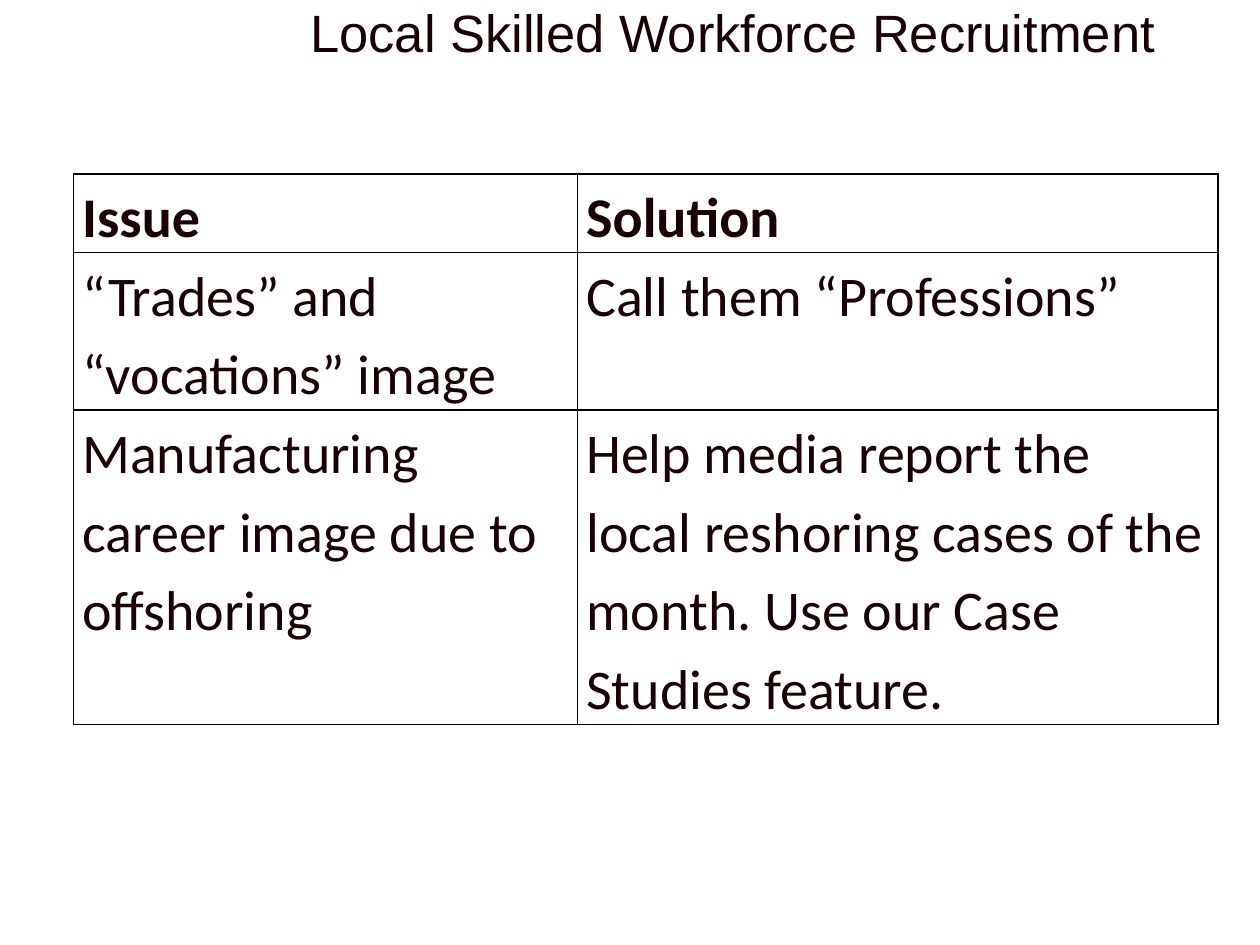
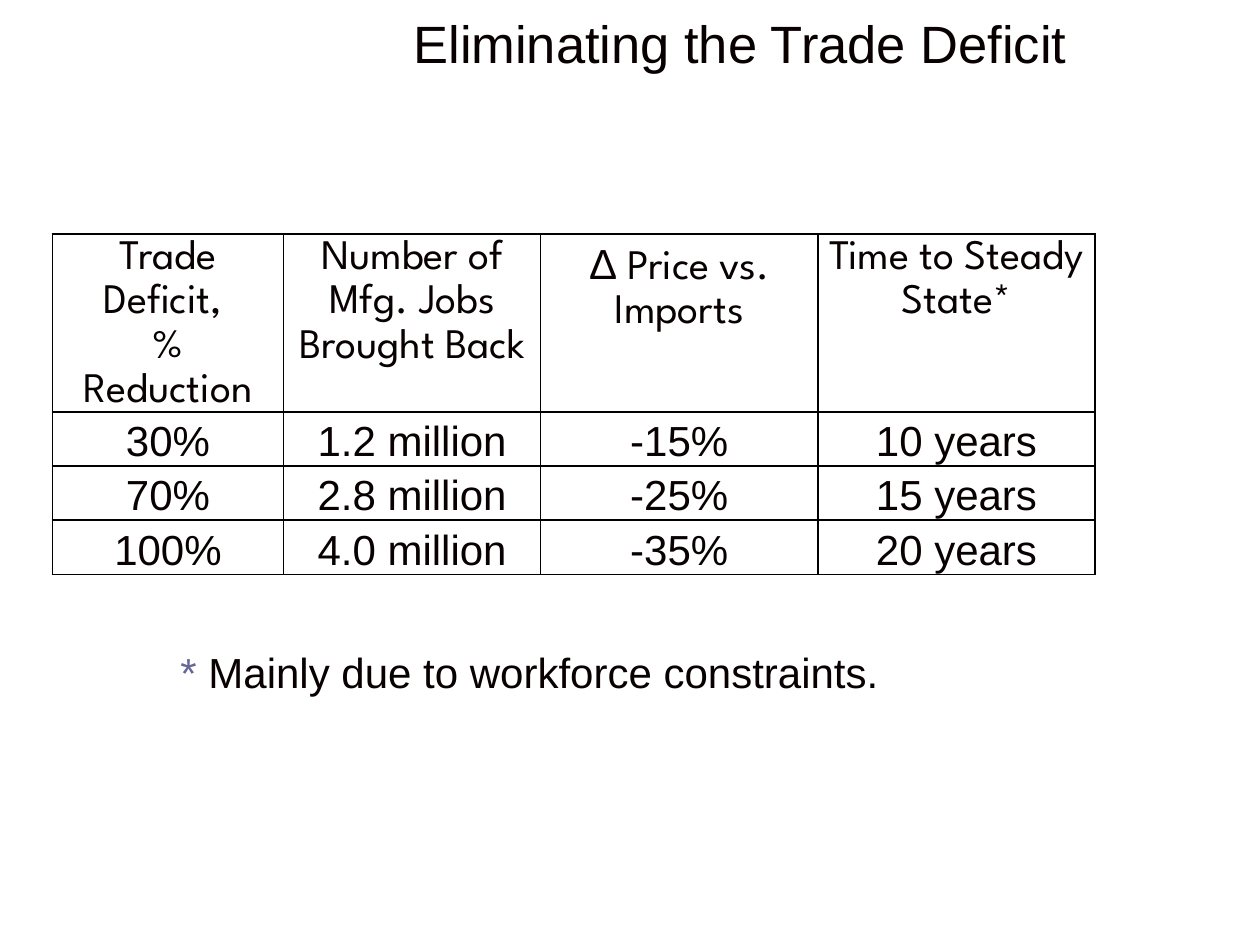
"""Build two slides on workforce recruitment and the trade deficit."""
from dataclasses import dataclass

from lxml import etree
from pptx import Presentation
from pptx.dml.color import RGBColor
from pptx.enum.text import MSO_ANCHOR, MSO_AUTO_SIZE, PP_ALIGN
from pptx.oxml.ns import qn
from pptx.util import Pt

LEFT, CENTER = PP_ALIGN.LEFT, PP_ALIGN.CENTER
TOP, MIDDLE = MSO_ANCHOR.TOP, MSO_ANCHOR.MIDDLE
NO_AUTOFIT = MSO_AUTO_SIZE.NONE
TITLE_ONLY = 5


@dataclass(frozen=True)
class Theme:
    """Hold the colours, fonts and type sizes."""
    maroon: str = "190104"
    ink: str = "080001"
    accent: str = "666699"
    border: str = "000000"
    background: str = "FFFFFF"
    sans: str = "Arial"
    reading: str = "Calibri"
    heading: str = "League Spartan"
    title_size: int = 30
    reading_size: int = 32
    figure_size: int = 24
    table_spacing: float = 1.15


class Deck:
    """Build slides in one style, keeping track of the current slide."""

    def __init__(self, theme):
        """Start a presentation with the given theme."""
        self.theme = theme
        self.presentation = Presentation()
        self.presentation.slide_width = Pt(720)
        self.presentation.slide_height = Pt(540)
        self.slide = None

    def fill_text(self, frame, paragraphs, style, align=LEFT, spacing=None):
        """Fill a frame with paragraphs made of (text, style changes) runs."""
        for index, runs in enumerate(paragraphs):
            paragraph = frame.add_paragraph() if index else frame.paragraphs[0]
            for name, value in {"alignment": align, "line_spacing": spacing}.items():
                setattr(paragraph, name, value)
            for text, changes in runs:
                for part, piece in enumerate(text.split("\v")):
                    if part:
                        paragraph.add_line_break()
                    run = paragraph.add_run()
                    run.text = piece
                    self.format_font(run.font, {**style, **changes})

    def format_font(self, font, style):
        """Apply font values and a colour to a font."""
        for name, value in style.items():
            if name == "color":
                font.color.rgb = RGBColor.from_string(value)
            else:
                setattr(font, name, value)

    def add_slide(self, title, top, color):
        """Add a slide with its title."""
        layout = self.presentation.slide_layouts[TITLE_ONLY]
        self.slide = self.presentation.slides.add_slide(layout)
        fill = self.slide.background.fill
        fill.solid()
        fill.fore_color.rgb = RGBColor.from_string(self.theme.background)
        heading = self.slide.shapes.title
        box = {"left": 138, "top": top, "width": 570, "height": 72}
        for name, value in box.items():
            setattr(heading, name, Pt(value))
        frame = heading.text_frame
        layout_values = {"auto_size": NO_AUTOFIT, "vertical_anchor": MIDDLE,
                         "word_wrap": True}
        for name, value in layout_values.items():
            setattr(frame, name, value)
        style = {"name": self.theme.sans, "size": Pt(self.theme.title_size),
                 "color": color}
        self.fill_text(frame, [[(title, {})]], style, CENTER)

    def add_table(self, left, top, widths, heights, rows, style, header_style,
                  align=LEFT, flush_columns=()):
        """Add a bordered table, with flush columns having no side margins."""
        table = self.slide.shapes.add_table(
            len(rows), len(widths), Pt(left), Pt(top),
            Pt(sum(widths)), Pt(sum(heights))).table
        table.first_row = table.horz_banding = False
        for column, width in zip(table.columns, widths):
            column.width = Pt(width)
        for row, height in zip(table.rows, heights):
            row.height = Pt(height)
        for row_index, row in enumerate(rows):
            for column_index, content in enumerate(row):
                cell = table.cell(row_index, column_index)
                side = Pt(0 if column_index in flush_columns else 5)
                values = {"margin_left": side, "margin_right": side,
                          "margin_top": 0, "margin_bottom": 0,
                          "vertical_anchor": TOP}
                for name, value in values.items():
                    setattr(cell, name, value)
                paragraphs = [[(content, {})]] if isinstance(content, str) else content
                self.fill_text(cell.text_frame, paragraphs,
                               style if row_index else header_style,
                               align, self.theme.table_spacing)
                self.add_borders(cell)
                cell.fill.background()

    def add_borders(self, cell):
        """Draw a thin line on each side of a cell."""
        properties = cell._tc.get_or_add_tcPr()
        for side in ("a:lnL", "a:lnR", "a:lnT", "a:lnB"):
            line = etree.SubElement(properties, qn(side), w=str(Pt(1)))
            fill = etree.SubElement(line, qn("a:solidFill"))
            etree.SubElement(fill, qn("a:srgbClr"), val=self.theme.border)

    def add_note(self, left, top, width, height, runs, style):
        """Add a text box holding one paragraph."""
        box = self.slide.shapes.add_textbox(Pt(left), Pt(top), Pt(width), Pt(height))
        box.text_frame.word_wrap = True
        self.fill_text(box.text_frame, [runs], style)


def build_recruitment(deck):
    """Build the slide on recruiting skilled workers."""
    theme = deck.theme
    deck.add_slide("Local Skilled Workforce Recruitment ", -18, theme.maroon)
    answers = {"name": theme.reading, "size": Pt(theme.reading_size),
               "color": theme.maroon, "bold": False}
    issues = [
        ("Issue", "Solution"),
        ("“Trades” and “vocations” image", "Call them “Professions”"),
        ("Manufacturing career image due to offshoring",
         "Help media report the local reshoring cases of the month. "
         "Use our Case Studies feature."),
    ]
    deck.add_table(42, 99.3, [288, 366], [44, 88.5, 176.5], issues,
                   answers, {**answers, "bold": True})


def build_deficit(deck):
    """Build the slide on closing the trade deficit."""
    theme = deck.theme
    deck.add_slide("Eliminating the Trade Deficit", -12, theme.ink)
    figures = {"name": theme.sans, "size": Pt(theme.figure_size),
               "color": theme.ink}
    scenarios = [
        ([[("Trade Deficit, ", {})], [("%\vReduction", {})]],
         "Number of Mfg. Jobs Brought Back",
         [[("Δ", {"name": theme.sans}), (" Price vs. Imports", {})]],
         "Time to Steady State*"),
        ("30%", "1.2 million", "-15%", "10 years"),
        ("70%", "2.8 million", "-25%", "15 years"),
        ("100%", "4.0 million", "-35%", "20 years"),
    ]
    deck.add_table(30, 133.8, [132, 147, 158.4, 158.4], [101, 31, 31, 31],
                   scenarios, figures, {**figures, "name": theme.heading},
                   CENTER, flush_columns=(1,))
    deck.add_note(96, 366, 414, 36,
                  [("* ", {"color": theme.accent}),
                   ("Mainly due to workforce constraints.", {})], figures)


def main():
    """Build and save the presentation."""
    deck = Deck(Theme())
    build_recruitment(deck)
    build_deficit(deck)
    deck.presentation.save("out.pptx")


if __name__ == "__main__":
    main()
